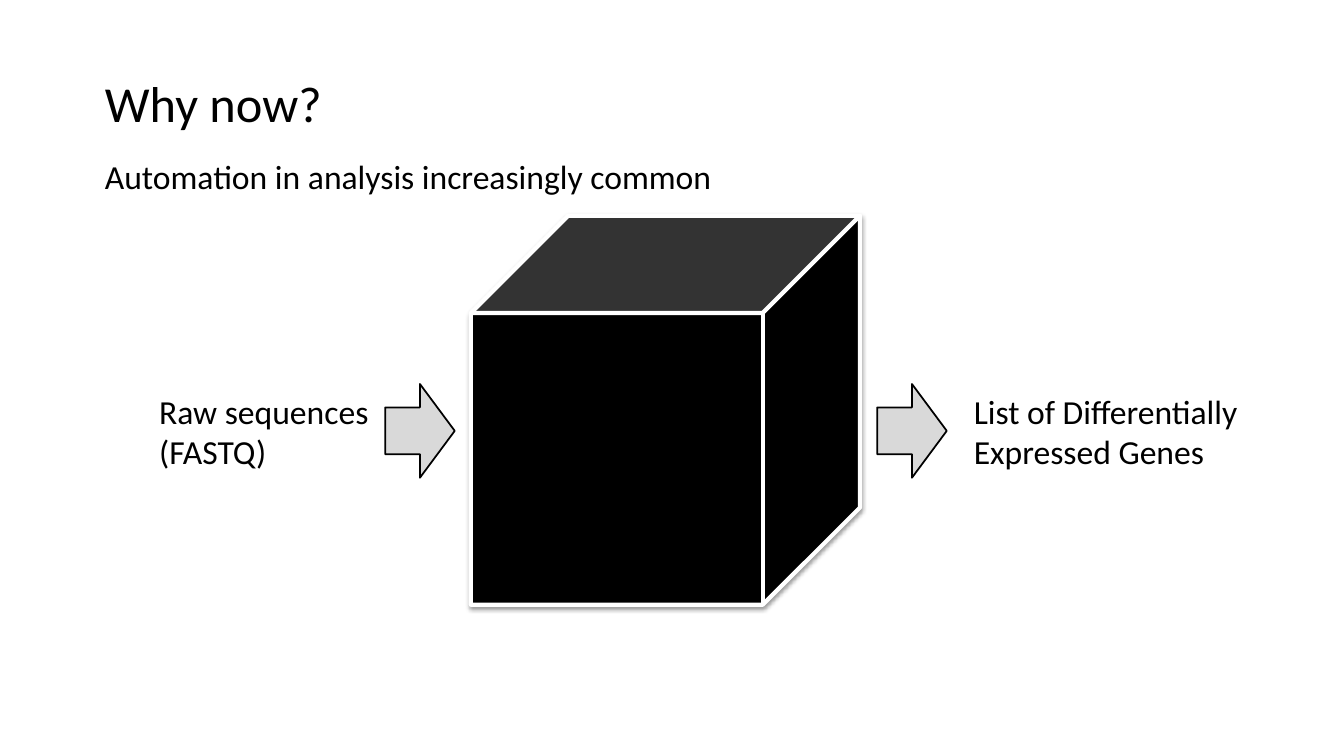
"""Build the slide showing analysis automation as a black box."""
from dataclasses import dataclass

import lxml.etree
import pptx
import pptx.dml.color
import pptx.enum.shapes
import pptx.enum.text
import pptx.oxml.ns
import pptx.shapes.autoshape
import pptx.slide
import pptx.util

BLACK = pptx.dml.color.RGBColor(0x00, 0x00, 0x00)
WHITE = pptx.dml.color.RGBColor(0xFF, 0xFF, 0xFF)
ARROW_GREY = pptx.dml.color.RGBColor(0xD9, 0xD9, 0xD9)
Preset = pptx.enum.shapes.MSO_SHAPE
Box = tuple[float, float, float, float]

FRAME_FORMAT = {
    "auto_size": pptx.enum.text.MSO_AUTO_SIZE.SHAPE_TO_FIT_TEXT,
    "vertical_anchor": pptx.enum.text.MSO_ANCHOR.TOP,
}
PARAGRAPH_FORMAT = {
    "alignment": pptx.enum.text.PP_ALIGN.LEFT,
    "space_before": pptx.util.Pt(0),
}


@dataclass(frozen=True)
class Wording:
    box: Box
    lines: tuple[str, ...]
    size: int = 24
    wrap: bool = False


@dataclass(frozen=True)
class Figure:
    preset: Preset
    box: Box
    fill: pptx.dml.color.RGBColor
    outline: pptx.dml.color.RGBColor
    weight: float


TITLE = Wording((0.94, 0.67, 2.49, 0.71), ("Why now?",), size=36)
STATEMENT = Wording(
    (0.94, 1.5, 6.67, 0.5), ("Automation in analysis increasingly common",), wrap=True
)
LABELS = (
    Wording((1.48, 3.83, 2.38, 0.91), ("Raw sequences", "(FASTQ)")),
    Wording((9.56, 3.83, 2.93, 0.91), ("List of Differentially", "Expressed Genes")),
)
BLACK_BOX = Figure(Preset.CUBE, (4.67, 2.14, 3.86, 3.86), BLACK, WHITE, 3)
ARROWS = tuple(
    Figure(Preset.RIGHT_ARROW, (left, 3.81, 0.69, 0.93), ARROW_GREY, BLACK, 1.25)
    for left in (3.82, 8.7)
)


def apply_format(target: object, values: dict[str, object]) -> None:
    for attribute, value in values.items():
        setattr(target, attribute, value)


def write(holder: pptx.shapes.autoshape.Shape, wording: Wording) -> None:
    sides = map(pptx.util.Inches, wording.box)
    apply_format(holder, dict(zip(("left", "top", "width", "height"), sides)))
    frame = holder.text_frame
    frame.text = "\n".join(wording.lines)
    apply_format(frame, FRAME_FORMAT | {"word_wrap": wording.wrap})
    font_format = {"name": "Calibri", "size": pptx.util.Pt(wording.size)}
    for paragraph in frame.paragraphs:
        apply_format(paragraph, PARAGRAPH_FORMAT)
        for run in paragraph.runs:
            apply_format(run.font, font_format)
            run.font.color.rgb = BLACK


def remove_bullet(holder: pptx.shapes.autoshape.Shape) -> None:
    properties = holder.text_frame.paragraphs[0]._p.get_or_add_pPr()
    properties.set("marL", "0")
    properties.set("indent", "0")
    lxml.etree.SubElement(properties, pptx.oxml.ns.qn("a:buNone"))


def draw(slide: pptx.slide.Slide, figure: Figure) -> pptx.shapes.autoshape.Shape:
    shape = slide.shapes.add_shape(figure.preset, *map(pptx.util.Inches, figure.box))
    shape.shadow.inherit = False
    shape.fill.solid()
    shape.fill.fore_color.rgb = figure.fill
    shape.line.color.rgb = figure.outline
    shape.line.width = pptx.util.Pt(figure.weight)
    return shape


def cast_shadow(shape: pptx.shapes.autoshape.Shape) -> None:
    effects = shape._element.spPr.find(pptx.oxml.ns.qn("a:effectLst"))
    shadow = lxml.etree.SubElement(
        effects, pptx.oxml.ns.qn("a:outerShdw"),
        blurRad="40000", dist="20000", dir="5400000", rotWithShape="0",
    )
    tint = lxml.etree.SubElement(shadow, pptx.oxml.ns.qn("a:srgbClr"), val=str(BLACK))
    lxml.etree.SubElement(tint, pptx.oxml.ns.qn("a:alpha"), val="38000")


def main() -> None:
    deck = pptx.Presentation()
    deck.slide_width = pptx.util.Inches(13.33)
    deck.slide_height = pptx.util.Inches(7.5)
    slide = deck.slides.add_slide(deck.slide_layouts.get_by_name("Title and Content"))
    write(slide.shapes.title, TITLE)
    statement = slide.placeholders[1]
    write(statement, STATEMENT)
    remove_bullet(statement)
    cast_shadow(draw(slide, BLACK_BOX))
    for label in LABELS:
        write(slide.shapes.add_textbox(0, 0, 0, 0), label)
    for arrow in ARROWS:
        draw(slide, arrow)
    deck.save("out.pptx")


if __name__ == "__main__":
    main()
